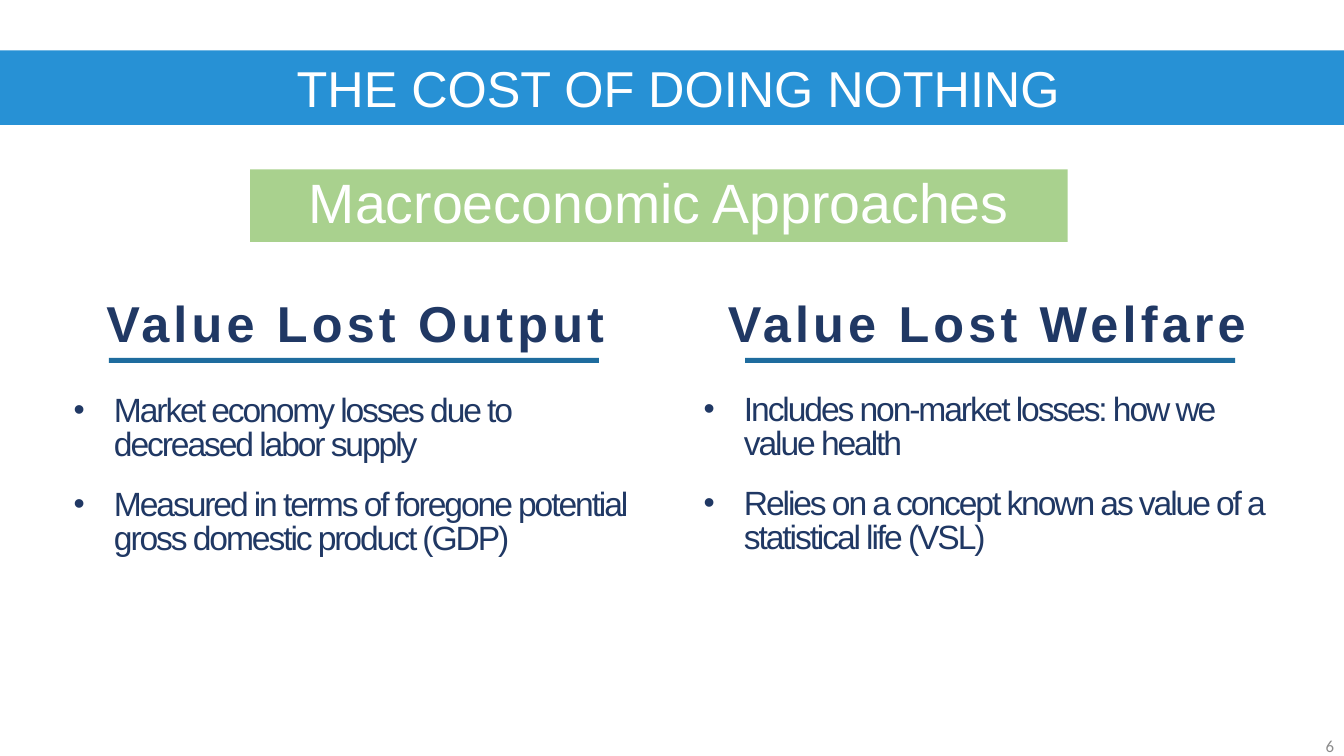
from lxml import etree
from pptx import Presentation
from pptx.dml.color import RGBColor
from pptx.enum.shapes import MSO_SHAPE
from pptx.enum.text import MSO_ANCHOR, MSO_AUTO_SIZE, PP_ALIGN
from pptx.oxml.ns import qn
from pptx.util import Inches, Pt

RECTANGLE = MSO_SHAPE.RECTANGLE
NO_AUTOFIT = MSO_AUTO_SIZE.NONE
TOP, MIDDLE = MSO_ANCHOR.TOP, MSO_ANCHOR.MIDDLE
LEFT, CENTER, RIGHT = PP_ALIGN.LEFT, PP_ALIGN.CENTER, PP_ALIGN.RIGHT
COMPARISON_LAYOUT = 4

COLORS = {"banner": "2791D5", "topic": "A9D18E", "rule": "1E6C9E",
          "navy": "203864", "white": "FFFFFF", "gray": "8C8C8C"}

# Text styles: font, paragraph and frame values, letter spacing in points
STYLES = {
    "banner": {"font": {"size": Pt(36)}, "color": "white",
               "paragraph": {"alignment": CENTER},
               "anchor": TOP, "insets": (0.13, 0.07, 0.13, 0.07)},
    "topic": {"font": {"size": Pt(39.6), "bold": False}, "color": "white",
              "paragraph": {"alignment": CENTER, "line_spacing": 0.9},
              "anchor": MIDDLE, "insets": (0.1, 0.05, 0.1, 0.05)},
    "heading": {"font": {"size": Pt(36), "bold": True}, "color": "navy",
                "paragraph": {"alignment": CENTER}, "spacing": 3,
                "anchor": MIDDLE, "insets": (0.19, 0.11, 0.19, 0.11)},
    "points": {"font": {"size": Pt(24)}, "color": "navy",
               "paragraph": {"alignment": LEFT, "line_spacing": 0.85, "space_after": Pt(18)},
               "spacing": -1.5, "bullet": True,
               "anchor": TOP, "insets": (0.1, 0.5, 0.1, 0.1)},
    "number": {"font": {"size": Pt(12), "name": "Calibri"}, "color": "gray",
               "paragraph": {"alignment": RIGHT},
               "anchor": MIDDLE, "insets": (0.1, 0.05, 0.1, 0.05)},
}

# Approach columns: heading, heading left, points box (left, top), rule left, points
APPROACHES = [
    ("Value Lost Output", 4.6, (4.73, 45.6), 8.1,
     ["Market economy losses due to decreased labor supply",
      "Measured in terms of foregone potential gross domestic product (GDP)"]),
    ("Value Lost Welfare", 51.6, (51.6, 45.47), 55.44,
     ["Includes non-market losses: how we value health",
      "Relies on a concept known as value of a  statistical life (VSL)"]),
]
COLUMN_WIDTH = 43.73


def apply_format(target, values):
    for attribute, value in values.items():
        setattr(target, attribute, value)


class SlideBuilder:
    """Places elements by percentages of the slide's width and height."""

    def __init__(self, deck, layout):
        self.deck = deck
        self.slide = deck.slides.add_slide(deck.slide_layouts[layout])

    def box(self, left, top, width, height):
        across, down = self.deck.slide_width / 100, self.deck.slide_height / 100
        return [round(share * unit) for share, unit in
                zip((left, top, width, height), (across, down, across, down))]

    def paint(self, shape, color):
        shape.fill.solid()
        shape.fill.fore_color.rgb = RGBColor.from_string(COLORS[color])

    def bar(self, area, color):
        bar = self.slide.shapes.add_shape(RECTANGLE, *self.box(*area))
        bar.shadow.inherit = False
        bar.line.fill.background()
        self.paint(bar, color)
        return bar

    def placeholder(self, idx, area, color, style, lines):
        holder = self.slide.placeholders[idx]
        apply_format(holder, dict(zip(("left", "top", "width", "height"), self.box(*area))))
        self.paint(holder, color)
        self.set_text(holder, style, lines)
        return holder

    def text_box(self, area, style, lines):
        self.set_text(self.slide.shapes.add_textbox(*self.box(*area)), style, lines)

    def set_text(self, shape, style_name, lines):
        style = STYLES[style_name]
        frame = shape.text_frame
        sides = ("margin_left", "margin_top", "margin_right", "margin_bottom")
        apply_format(frame, {"word_wrap": True, "auto_size": NO_AUTOFIT,
                             "vertical_anchor": style["anchor"],
                             **dict(zip(sides, map(Inches, style["insets"])))})
        for position, line in enumerate(lines):
            paragraph = frame.add_paragraph() if position else frame.paragraphs[0]
            if style.get("bullet"):
                self.bullet(paragraph)
            apply_format(paragraph, {"space_before": Pt(0), **style["paragraph"]})
            run = paragraph.add_run()
            run.text = line
            apply_format(run.font, {"name": "Arial", **style["font"]})
            run.font.color.rgb = RGBColor.from_string(COLORS[style["color"]])
            if "spacing" in style:
                run._r.get_or_add_rPr().set("spc", str(round(style["spacing"] * 100)))

    def bullet(self, paragraph):
        properties = paragraph._p.get_or_add_pPr()
        properties.set("marL", str(Inches(0.4)))
        properties.set("indent", str(Inches(-0.4)))
        for tag, attribute, value in (("a:buSzPct", "val", "95000"),
                                      ("a:buFont", "typeface", "Arial"),
                                      ("a:buChar", "char", "•")):
            etree.SubElement(properties, qn(tag)).set(attribute, value)


def main():
    deck = Presentation()
    deck.slide_width, deck.slide_height = Inches(13.33), Inches(7.5)
    builder = SlideBuilder(deck, COMPARISON_LAYOUT)

    # Banner and topic title
    banner = builder.bar((0, 6.67, 100, 9.87), "banner")
    builder.set_text(banner, "banner", [" THE COST OF DOING NOTHING"])
    builder.placeholder(0, (18.6, 22.4, 60.84, 9.6), "topic", "topic",
                        ["Macroeconomic Approaches"])

    # Two approaches side by side, each heading in front of its points
    for column, (title, title_left, points_at, rule_left, points) in enumerate(APPROACHES):
        heading = builder.placeholder(2 * column + 1, (title_left, 36.93, COLUMN_WIDTH, 11.47),
                                      "white", "heading", [title])
        builder.placeholder(2 * column + 2, (*points_at, COLUMN_WIDTH, 40.93),
                            "white", "points", points)
        builder.slide.shapes._spTree.append(heading._element)
        builder.bar((rule_left, 47.33, 36.46, 0.67), "rule")

    # Slide number
    builder.text_box((89.27, 96.27, 10.73, 4.67), "number", ["6"])
    deck.save("out.pptx")


if __name__ == "__main__":
    main()
